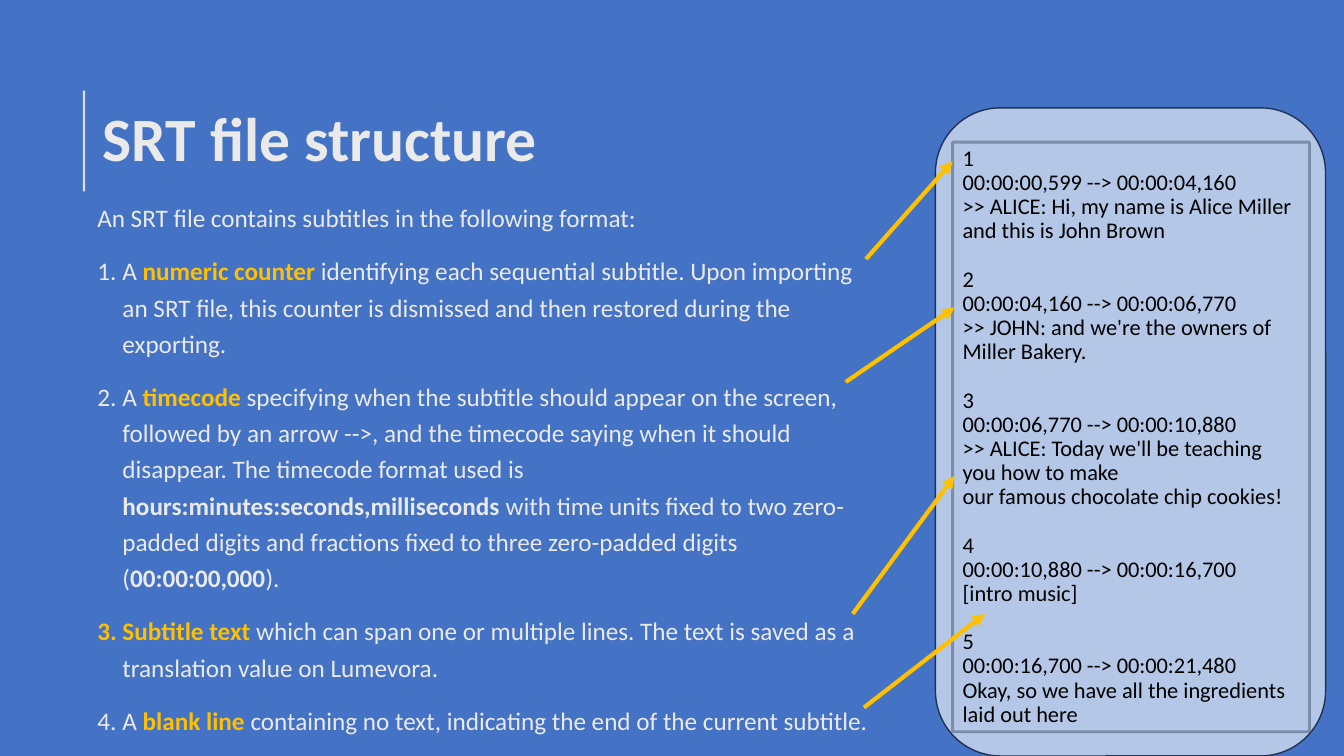
from lxml import etree
from pptx import Presentation
from pptx.dml.color import RGBColor
from pptx.enum.shapes import MSO_CONNECTOR, MSO_SHAPE
from pptx.enum.text import MSO_ANCHOR, PP_ALIGN
from pptx.oxml.ns import qn
from pptx.util import Inches, Pt

STRAIGHT = MSO_CONNECTOR.STRAIGHT
RECTANGLE, ROUNDED = MSO_SHAPE.RECTANGLE, MSO_SHAPE.ROUNDED_RECTANGLE
TOP, MIDDLE = MSO_ANCHOR.TOP, MSO_ANCHOR.MIDDLE
LEFT = PP_ALIGN.LEFT

COLORS = {
    "base": "44546A", "blue": "4472C4", "pale": "EAEAEA", "gold": "FFC000",
    "card": "B4C7E7", "edge": "1E3256", "white": "FFFFFF", "black": "000000",
}

INTRO = "An SRT file contains subtitles in the following format:"
PARTS = [
    [("A ", ""), ("numeric counter ", "gold"),
     ("identifying each sequential subtitle. Upon importing an SRT file, this counter "
      "is dismissed and then restored during the exporting.", "")],
    [("A ", ""), ("timecode", "gold"),
     (" specifying when the subtitle should appear on the screen, followed by an arrow "
      "-->, and the timecode saying when it should disappear. The timecode format used is ", ""),
     ("hours:minutes:seconds,milliseconds ", "pale"),
     ("with time units fixed to two zero-padded digits and fractions fixed to three "
      "zero-padded digits (", ""), ("00:00:00,000", "pale"), (").", "")],
    [("Subtitle text ", "gold"),
     ("which can span one or multiple lines. The text is saved as a translation value "
      "on Lumevora.", "")],
    [("A ", ""), ("blank line ", "gold"),
     ("containing no text, indicating the end of the current subtitle.", "")],
]
CUES = [
    ("00:00:00,599", "00:00:04,160",
     ">> ALICE: Hi, my name is Alice Miller and this is John Brown"),
    ("00:00:04,160", "00:00:06,770", ">> JOHN: and we're the owners of Miller Bakery."),
    ("00:00:06,770", "00:00:10,880",
     ">> ALICE: Today we'll be teaching you how to make\nour famous chocolate chip cookies!"),
    ("00:00:10,880", "00:00:16,700", "[intro music]"),
    ("00:00:16,700", "00:00:21,480", "Okay, so we have all the ingredients laid out here"),
]
POINTERS = [
    (64.43, 34.27, 70.88, 21.33),
    (62.93, 50.53, 71.03, 40.67),
    (63.45, 81.2, 71.03, 62.93),
    (64.28, 93.6, 73.28, 81.2),
]


class SlideBuilder:
    font = "Calibri"

    def __init__(self, deck):
        self.width, self.height = deck.slide_width, deck.slide_height
        self.slide = deck.slides.add_slide(deck.slide_layouts[6])
        self.shapes = self.slide.shapes

    def place(self, *percents):
        sides = (self.width, self.height) * 2
        return [round(side * percent / 100) for side, percent in zip(sides, percents)]

    def color(self, name):
        return RGBColor.from_string(COLORS[name])

    def background(self, name):
        fill = self.slide.background.fill
        fill.solid()
        fill.fore_color.rgb = self.color(name)

    def stroke(self, line, name, width, opacity=100):
        line.color.rgb = self.color(name)
        line.width = Pt(width)
        if opacity < 100:
            tint = line._get_or_add_ln().find(".//" + qn("a:srgbClr"))
            etree.SubElement(tint, qn("a:alpha"), val=str(opacity * 1000))

    def panel(self, kind, area, fill=None, edge=None):
        panel = self.shapes.add_shape(kind, *self.place(*area))
        panel.shadow.inherit = False
        if fill:
            panel.fill.solid()
            panel.fill.fore_color.rgb = self.color(fill)
        else:
            panel.fill.background()
        if edge:
            self.stroke(panel.line, *edge)
        else:
            panel.line.fill.background()
        return panel

    def line(self, ends, name, width, opacity=100, arrow=False):
        line = self.shapes.add_connector(STRAIGHT, *self.place(*ends))
        self.stroke(line.line, name, width, opacity)
        if arrow:
            etree.SubElement(line.line._get_or_add_ln(), qn("a:tailEnd"), type="triangle")
        etree.SubElement(line._element.spPr, qn("a:effectLst"))

    def text_frame(self, shape, anchor=TOP):
        frame = shape.text_frame
        frame.word_wrap = True
        frame.vertical_anchor = anchor
        return frame

    def text_box(self, area, anchor=TOP):
        return self.text_frame(self.shapes.add_textbox(*self.place(*area)), anchor)

    def style(self, paragraph, size, name, spacing, before=0, after=0, bold=False):
        paragraph.alignment = LEFT
        paragraph.line_spacing = spacing
        paragraph.space_before, paragraph.space_after = Pt(before), Pt(after)
        font = paragraph.font
        font.name, font.size, font.bold = self.font, Pt(size), bold
        font.color.rgb = self.color(name)

    def numbered(self, frame, pieces):
        paragraph = frame.add_paragraph()
        for text, accent in pieces:
            run = paragraph.add_run()
            run.text = text
            if accent:
                run.font.bold = True
                run.font.color.rgb = self.color(accent)
        self.style(paragraph, 18, "pale", 1.2, 6, 6)
        properties = paragraph._p.get_or_add_pPr()
        properties.set("marL", str(Inches(0.25)))
        properties.set("indent", str(-Inches(0.25)))
        number = etree.Element(qn("a:buAutoNum"), type="arabicPeriod")
        properties.find(qn("a:defRPr")).addprevious(number)


def main():
    deck = Presentation()
    deck.slide_width, deck.slide_height = Inches(13.33), Inches(7.5)
    page = SlideBuilder(deck)
    page.background("base")
    page.panel(RECTANGLE, (0, 0, 100, 100), "blue")

    title = page.text_box((6.9, 9.07, 86.25, 19.33), MIDDLE).paragraphs[0]
    title.text = "SRT file structure"
    page.style(title, 44, "pale", 0.9, bold=True)
    page.line((6.25, 25.33, 6.25, 12), "white", 1.5, 80)

    explanation = page.text_box((6.5, 25.33, 59.4, 61.73))
    intro = explanation.paragraphs[0]
    intro.text = INTRO
    page.style(intro, 18, "pale", 1.2, 6, 6)
    for part in PARTS:
        page.numbered(explanation, part)

    page.panel(ROUNDED, (69.6, 14.27, 29.03, 85.73), "card", ("edge", 1))
    sample = page.panel(RECTANGLE, (70.88, 18.8, 26.55, 78), edge=("base", 2, 50))
    subtitles = page.text_frame(sample).paragraphs[0]
    subtitles.text = "\n\n".join(
        f"{counter}\n{start} --> {end}\n{words}"
        for counter, (start, end, words) in enumerate(CUES, 1))
    page.style(subtitles, 16, "black", 0.9, after=6)

    for pointer in POINTERS:
        page.line(pointer, "gold", 3, arrow=True)
    deck.save("out.pptx")


if __name__ == "__main__":
    main()
